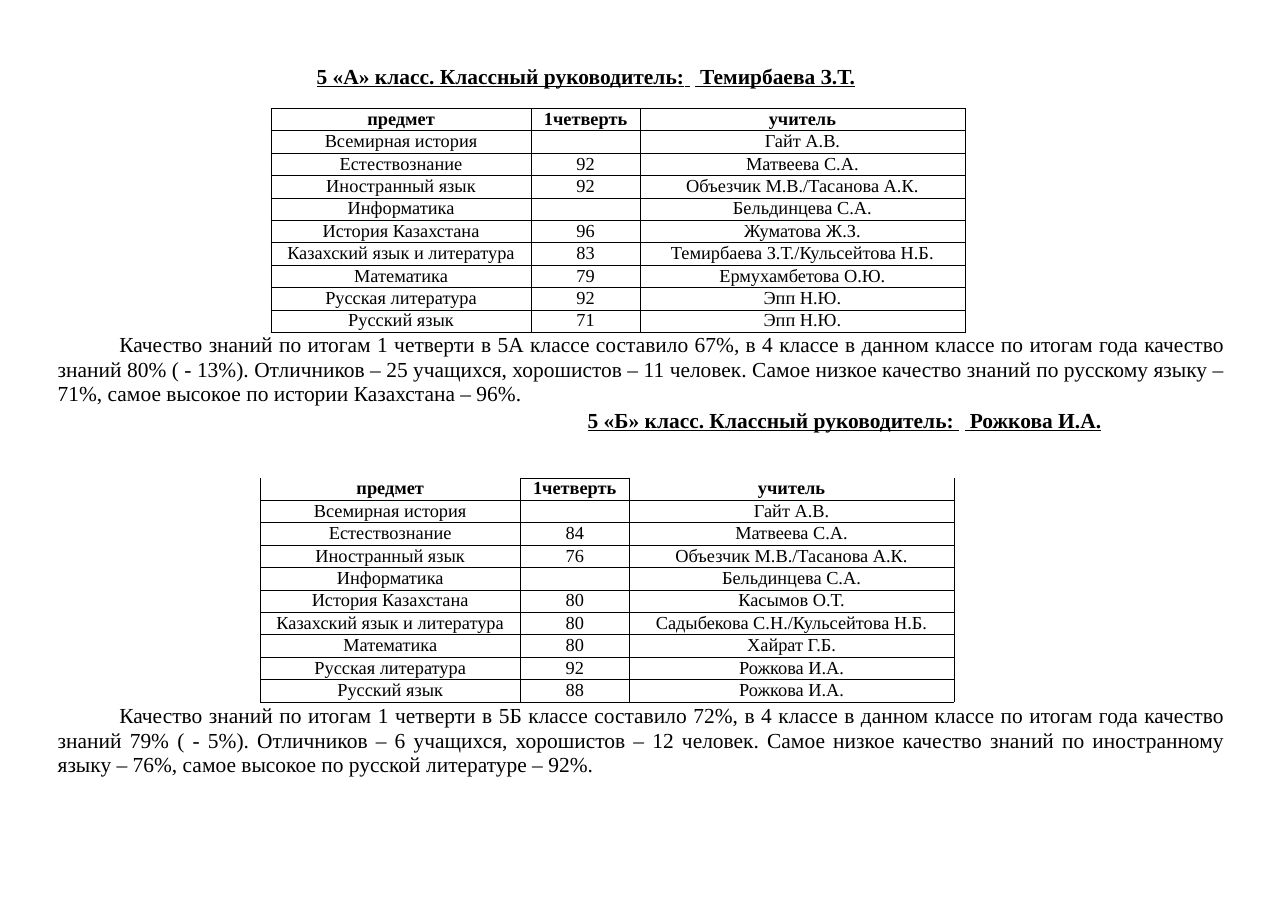
from dataclasses import dataclass

from lxml.etree import SubElement
from pptx import Presentation
from pptx.dml.color import RGBColor
from pptx.enum.text import MSO_ANCHOR as Anchor, MSO_AUTO_SIZE as AutoSize, PP_ALIGN as Align
from pptx.oxml.ns import qn
from pptx.util import Cm, Pt


@dataclass(frozen=True)
class Theme:
    font: str = "Times New Roman"
    ink: RGBColor = RGBColor(0, 0, 0)
    text_size: Pt = Pt(14)
    table_size: Pt = Pt(12)
    table_leading: Pt = Pt(13.7)
    border: Pt = Pt(0.5)


THEME = Theme()

HEADER = ("предмет", "1четверть", "учитель")
COLUMN_WIDTHS = (Cm(6), Cm(2.51), Cm(7.49))
TABLE_HEIGHT = Cm(5.16)
SUBJECTS = (
    "Всемирная история", "Естествознание", "Иностранный язык",
    "Информатика", "История Казахстана", "Казахский язык и литература",
    "Математика", "Русская литература", "Русский язык",
)

# Marks and teachers, in the order of the subjects
MARKS_A = ("", "92", "92", "", "96", "83", "79", "92", "71")
TEACHERS_A = (
    "Гайт А.В.", "Матвеева С.А.", "Объезчик М.В./Тасанова А.К.",
    "Бельдинцева С.А.", "Жуматова Ж.З.", "Темирбаева З.Т./Кульсейтова Н.Б.",
    "Ермухамбетова О.Ю.", "Эпп Н.Ю.", "Эпп Н.Ю.",
)
MARKS_B = ("", "84", "76", "", "80", "80", "80", "92", "88")
TEACHERS_B = (
    "Гайт А.В.", "Матвеева С.А.", "Объезчик М.В./Тасанова А.К.",
    "Бельдинцева С.А.", "Касымов О.Т.", "Садыбекова С.Н./Кульсейтова Н.Б.",
    "Хайрат Г.Б.", "Рожкова И.А.", "Рожкова И.А.",
)

SUMMARY_A = (
    "Качество знаний по итогам 1 четверти в 5А классе составило 67%, "
    "в 4 классе в данном классе по итогам года качество знаний 80% ( - 13%). "
    "Отличников – 25 учащихся, хорошистов – 11 человек. Самое низкое качество "
    "знаний по русскому языку – 71%, самое высокое по истории Казахстана – 96%."
)
SUMMARY_B = (
    "Качество знаний по итогам 1 четверти в 5Б классе составило 72%, "
    "в 4 классе в данном классе по итогам года качество знаний 79% ( - 5%). "
    "Отличников – 6 учащихся, хорошистов – 12 человек. Самое низкое качество "
    "знаний по иностранному языку – 76%, самое высокое по русской литературе – 92%."
)


def set_font(paragraph, size, bold=False, underline=False):
    font = paragraph.font
    font.name, font.size = THEME.font, size
    font.bold, font.underline = bold, underline
    font.color.rgb = THEME.ink


def place(placeholder, left, top, width, height, inset_top):
    """Move a placeholder and strip its margins and autofit."""
    placeholder.left, placeholder.top = left, top
    placeholder.width, placeholder.height = width, height
    frame = placeholder.text_frame
    frame.margin_left = frame.margin_right = frame.margin_bottom = 0
    frame.margin_top = inset_top
    frame.vertical_anchor = Anchor.TOP
    frame.auto_size = AutoSize.NONE
    frame.word_wrap = True
    return frame


def set_layout(paragraph, align, before, leading, margin, indent):
    properties = paragraph._p.get_or_add_pPr()
    properties.set("marL", str(margin))
    properties.set("indent", str(indent))
    SubElement(properties, qn("a:buNone"))
    paragraph.alignment = align
    paragraph.space_before, paragraph.space_after = before, Pt(0)
    paragraph.line_spacing = leading


def write_heading(paragraph, group, teacher, before=Pt(0), margin=0):
    """Class heading with a widened space in front of the teacher's name."""
    set_layout(paragraph, Align.LEFT, before, 1.0, margin, 0)
    set_font(paragraph, THEME.text_size, bold=True, underline=True)
    paragraph.add_run().text = f"5 «{group}» класс. Классный руководитель:"
    gap = paragraph.add_run()
    gap.text = " "
    gap._r.get_or_add_rPr().set("spc", "320")
    paragraph.add_run().text = f" {teacher}"


def write_summary(paragraph, text, before, leading):
    set_layout(paragraph, Align.JUSTIFY, before, leading, Cm(0.03), Cm(1.42))
    set_font(paragraph, THEME.text_size)
    paragraph.add_run().text = text


def set_borders(cell, open_top):
    properties = cell._tc.get_or_add_tcPr()
    for side in ("lnL", "lnR", "lnT", "lnB"):
        line = SubElement(properties, qn(f"a:{side}"), w=str(THEME.border))
        if side == "lnT" and open_top:
            SubElement(line, qn("a:noFill"))
        else:
            fill = SubElement(line, qn("a:solidFill"))
            SubElement(fill, qn("a:srgbClr"), val=str(THEME.ink))


def add_marks_table(slide, left, top, marks, teachers, open_top_columns=()):
    rows = [HEADER, *zip(SUBJECTS, marks, teachers)]
    table = slide.shapes.add_table(
        len(rows), len(HEADER), left, top, sum(COLUMN_WIDTHS), TABLE_HEIGHT
    ).table
    table.first_row = table.horz_banding = False
    for column, width in zip(table.columns, COLUMN_WIDTHS):
        column.width = width
    for r, row in enumerate(rows):
        for c, text in enumerate(row):
            cell = table.cell(r, c)
            cell.margin_left = cell.margin_right = 0
            cell.margin_top = cell.margin_bottom = 0
            set_borders(cell, open_top=r == 0 and c in open_top_columns)
            cell.fill.background()
            entry = cell.text_frame.paragraphs[0]
            entry.alignment = Align.CENTER
            entry.line_spacing = THEME.table_leading
            set_font(entry, THEME.table_size, bold=r == 0)
            if text:
                entry.add_run().text = text


def main():
    deck = Presentation()
    deck.slide_width, deck.slide_height = Cm(29.7), Cm(21)
    slide = deck.slides.add_slide(deck.slide_layouts.get_by_name("Two Content"))
    title, results_a, results_b = slide.placeholders

    # Class 5 «А»
    heading = place(title, Cm(7.3), Cm(1.42), Cm(12.9), Cm(0.66), Cm(0.03))
    write_heading(heading.paragraphs[0], "А", "Темирбаева З.Т.", before=Pt(0.9))
    add_marks_table(slide, Cm(6.25), Cm(2.5), MARKS_A, TEACHERS_A)
    body = place(results_a, Cm(1.3), Cm(7.62), Cm(26.95), Cm(2.39), Cm(0.05))
    write_summary(body.paragraphs[0], SUMMARY_A, Pt(1.5), 0.96)

    # Class 5 «Б»
    write_heading(body.add_paragraph(), "Б", "Рожкова И.А.", margin=Cm(12.25))
    add_marks_table(slide, Cm(6), Cm(11.02), MARKS_B, TEACHERS_B, open_top_columns=(0, 2))
    body = place(results_b, Cm(1.3), Cm(16.13), Cm(26.95), Cm(1.8), Cm(0.08))
    write_summary(body.paragraphs[0], SUMMARY_B, Pt(2), Pt(16.1))

    deck.save("out.pptx")


if __name__ == "__main__":
    main()
